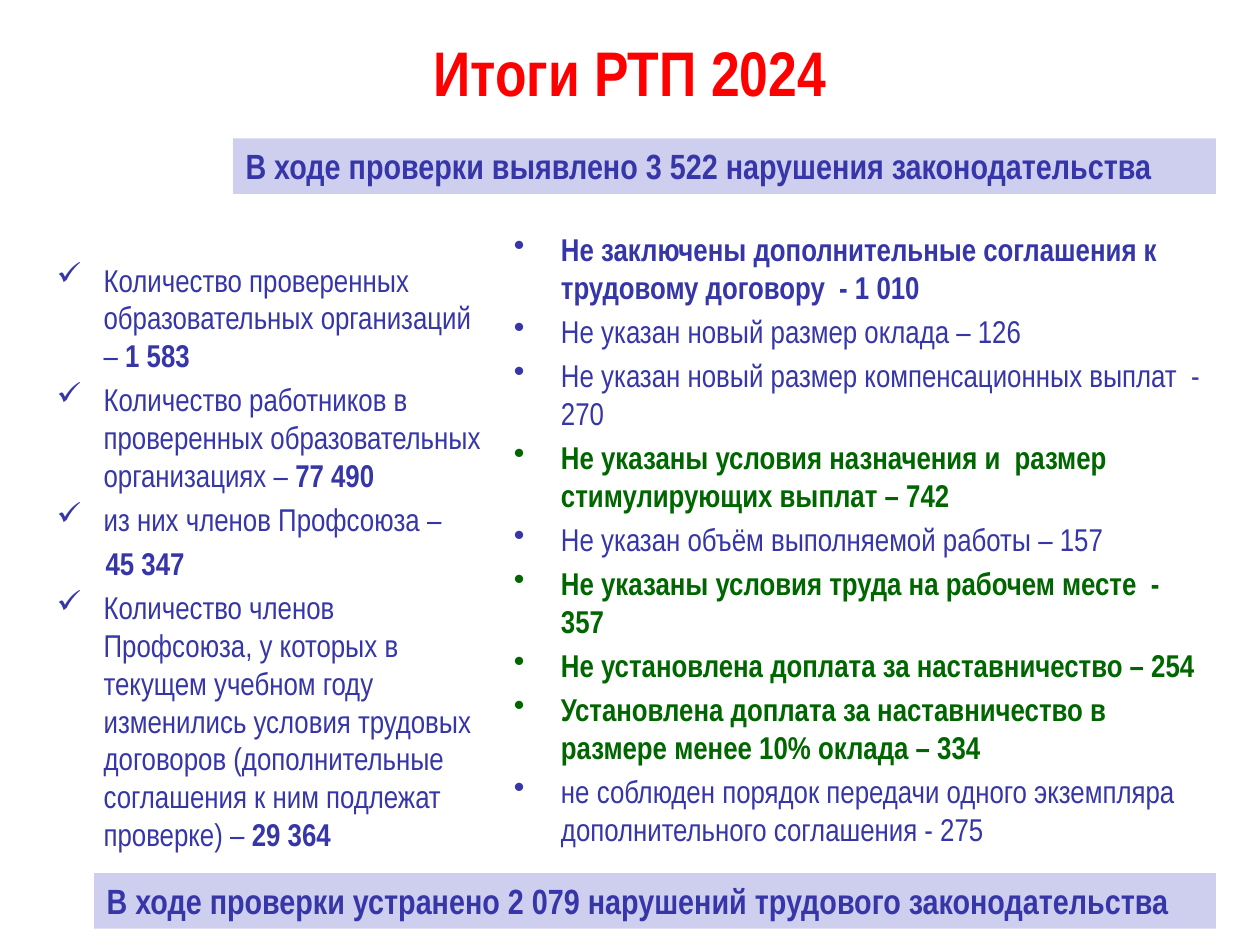
import pptx
import pptx.util
import pptx.dml.color
import pptx.enum.shapes
import pptx.enum.text
from lxml import etree

Cm, Pt = pptx.util.Cm, pptx.util.Pt
ANCHOR = pptx.enum.text.MSO_ANCHOR
ALIGN = pptx.enum.text.PP_ALIGN
COLORS = {"title": "FF0000", "blue": "3636A8", "green": "006600",
          "band": "CECEEF", "white": "FFFFFF"}
INDENT = Cm(0.95)


def add_span(para, text, color, size, bold):
    span = para.add_run()
    span.text = text
    for name, value in {"name": "Arial Narrow", "size": Pt(size), "bold": bold}.items():
        setattr(span.font, name, value)
    span.font.color.rgb = pptx.dml.color.RGBColor.from_string(COLORS[color])


def add_list(frame, mark, items):
    """Each item is a list of (text, color, bold) spans; unmarked items start with None."""
    for number, item in enumerate(items):
        para = frame.paragraphs[0] if number == 0 else frame.add_paragraph()
        marked = item[0] is not None
        properties = para._p.get_or_add_pPr()
        properties.set("marL", str(INDENT if marked else Cm(0.99)))
        properties.set("indent", str(-INDENT if marked else 0))
        if marked:
            etree.SubElement(properties, pptx.oxml.ns.qn("a:buChar")).set("char", mark)
        if number:
            para.space_before = Pt(3.6)
        for text, color, bold in filter(None, item):
            add_span(para, text, color, 18, bold)


deck = pptx.Presentation()
deck.slide_width, deck.slide_height = Cm(25.4), Cm(19.05)
page = deck.slides.add_slide(deck.slide_layouts[5])

# Title
title = page.shapes.title
for name, value in {"left": 1.27, "top": 0.76, "width": 22.86, "height": 1.37}.items():
    setattr(title, name, Cm(value))
title.text_frame.auto_size = pptx.enum.text.MSO_AUTO_SIZE.NONE
title.text_frame.vertical_anchor = ANCHOR.MIDDLE
title.text_frame.paragraphs[0].alignment = ALIGN.CENTER
add_span(title.text_frame.paragraphs[0], "Итоги РТП 2024", "title", 36, True)

# Left column: what was checked
checked = [
    [("Количество проверенных образовательных организаций – ", "blue", False),
     ("1 583", "blue", True)],
    [("Количество работников в проверенных образовательных организациях – ", "blue", False),
     ("77 490", "blue", True)],
    [("из них членов Профсоюза –", "blue", False)],
    [None, ("45 347", "blue", True)],
    [("Количество членов Профсоюза, у которых в текущем учебном году изменились "
      "условия трудовых договоров (дополнительные соглашения к ним подлежат "
      "проверке) – ", "blue", False),
     ("29 364", "blue", True)],
]
box = page.shapes.add_textbox(Cm(0.89), Cm(5.13), Cm(9.19), Cm(12.57))
box.text_frame.word_wrap = True
add_list(box.text_frame, "✓", checked)

# Right column: violations found
violations = [
    ("Не заключены дополнительные соглашения к трудовому договору  - 1 010", "blue", True),
    ("Не указан новый размер оклада – 126", "blue", False),
    ("Не указан новый размер компенсационных выплат  - 270", "blue", False),
    ("Не указаны условия назначения и  размер стимулирующих выплат – 742", "green", True),
    ("Не указан объём выполняемой работы – 157", "blue", False),
    ("Не указаны условия труда на рабочем месте  - 357", "green", True),
    ("Не установлена доплата за наставничество – 254", "green", True),
    ("Установлена доплата за наставничество в размере менее 10% оклада – 334", "green", True),
    ("не соблюден порядок передачи одного экземпляра дополнительного соглашения - 275",
     "blue", False),
]
box = page.shapes.add_textbox(Cm(10.11), Cm(4.52), Cm(14.4), Cm(13))
box.fill.solid()
box.fill.fore_color.rgb = pptx.dml.color.RGBColor.from_string(COLORS["white"])
box.text_frame.word_wrap = True
add_list(box.text_frame, "•", [[violation] for violation in violations])

# Summary bands, sharing a right edge
RIGHT_EDGE = 24.51
bands = [
    (1.9, 17.6, "В ходе проверки устранено 2 079 нарушений трудового законодательства"),
    (4.7, 2.79, "В ходе проверки выявлено 3 522 нарушения законодательства"),
]
for left, top, text in bands:
    band = page.shapes.add_shape(pptx.enum.shapes.MSO_SHAPE.RECTANGLE, Cm(left), Cm(top),
                                 Cm(RIGHT_EDGE - left), Cm(1.12))
    band.shadow.inherit = False
    band.fill.solid()
    band.fill.fore_color.rgb = pptx.dml.color.RGBColor.from_string(COLORS["band"])
    band.line.fill.background()
    for name, value in {"word_wrap": True, "vertical_anchor": ANCHOR.TOP,
                        "auto_size": pptx.enum.text.MSO_AUTO_SIZE.SHAPE_TO_FIT_TEXT}.items():
        setattr(band.text_frame, name, value)
    para = band.text_frame.paragraphs[0]
    para.alignment = ALIGN.LEFT
    add_span(para, text, "blue", 20, True)

deck.save("out.pptx")
